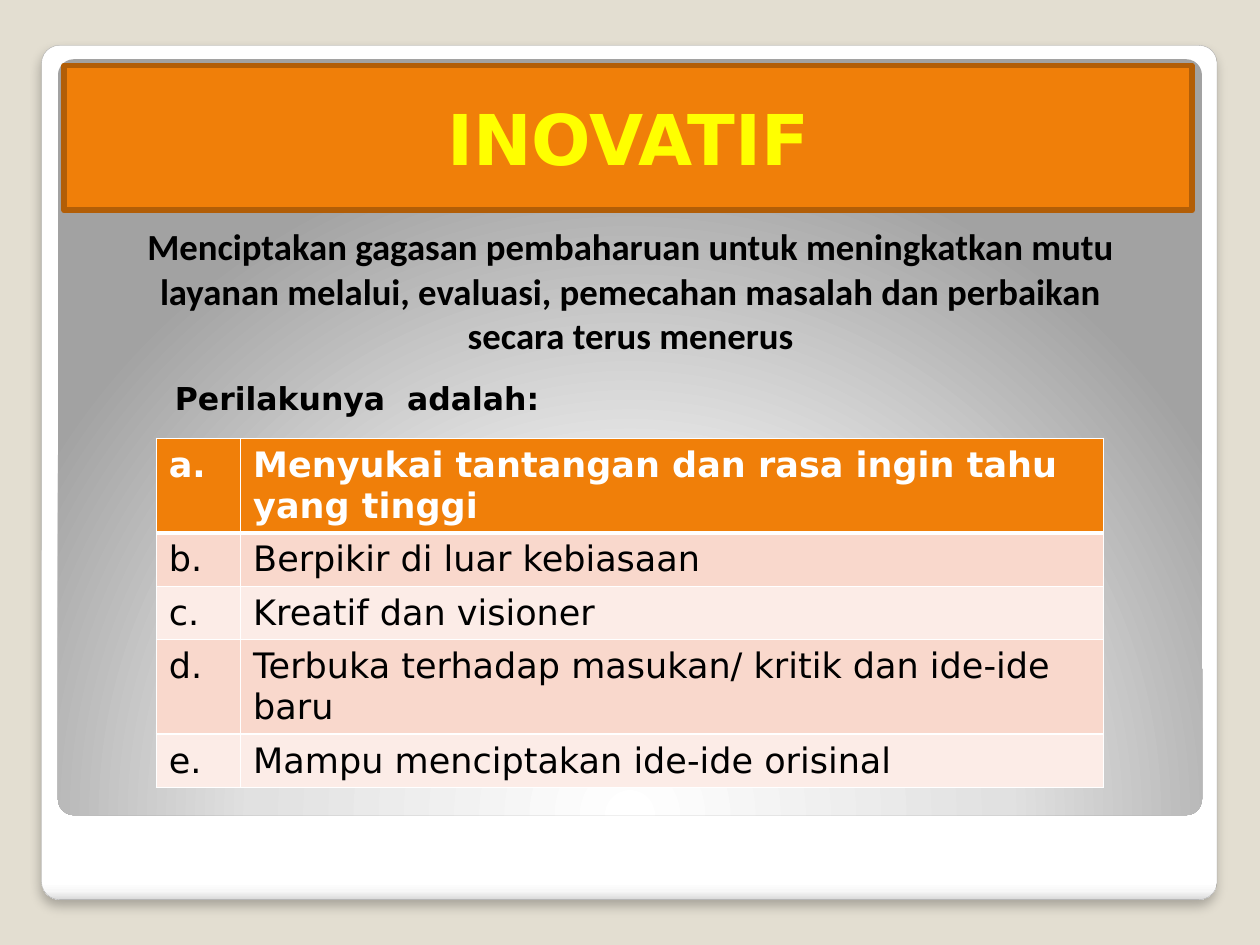
"""Build the INOVATIF slide: framed panel, banner, definition and behaviour table."""
from lxml import etree
from pptx import Presentation
from pptx import util as u
from pptx.dml.color import RGBColor
from pptx.enum import shapes, text
from pptx.oxml import parse_xml
from pptx.oxml.ns import qn

BANNER = "INOVATIF"
DEFINITION = ("Menciptakan gagasan pembaharuan untuk meningkatkan mutu layanan melalui, "
              "evaluasi, pemecahan masalah dan perbaikan secara terus menerus")
LEAD = "Perilakunya  adalah:"
BEHAVIOURS = [
    ("a.", "Menyukai tantangan dan rasa ingin tahu yang tinggi"),
    ("b.", "Berpikir di luar kebiasaan"),
    ("c.", "Kreatif dan visioner"),
    ("d.", "Terbuka terhadap masukan/ kritik dan ide-ide baru"),
    ("e.", "Mampu menciptakan ide-ide orisinal"),
]
COLUMNS = [0.67, 6.85]
ROWS = [0.75, 0.42, 0.42, 0.75, 0.42]
BANDS = ["FCECE7", "F9D8CC"]
ORANGE, BROWN, YELLOW, BLACK, WHITE = "F07F09", "B25E07", "FFFF00", "000000", "FFFFFF"
SANS = "DejaVu Sans"
A = 'xmlns:a="http://schemas.openxmlformats.org/drawingml/2006/main"'
LINEAR = '<a:lin ang="5400000" scaled="0"/>'
RADIAL = ('<a:path path="circle"><a:fillToRect l="50000" t="175000" '
          'r="50000" b="-75000"/></a:path>')
SHADOW = (f'<a:effectLst {A}><a:outerShdw blurRad="76200" dist="50800" dir="5400000" '
          'algn="t" rotWithShape="0"><a:srgbClr val="000000"><a:alpha val="25000"/>'
          '</a:srgbClr></a:outerShdw></a:effectLst>')


def rgb(value):
    """Turn a hex string into a colour."""
    return RGBColor.from_string(value)


def box(*lengths):
    """Turn inches into lengths."""
    return [u.Inches(n) for n in lengths]


def write(tf, words, size, font, colour, bold=True, align=None):
    """Fill a text frame with one formatted paragraph."""
    tf.word_wrap = True
    tf.text = words
    p = tf.paragraphs[0]
    p.alignment = align
    f = p.runs[0].font
    f.size, f.name, f.bold = u.Pt(size), font, bold
    f.color.rgb = rgb(colour)


def add_panel(slide, area, stops, direction):
    """Add a rounded panel with a gradient fill."""
    sp = slide.shapes.add_shape(shapes.MSO_SHAPE.ROUNDED_RECTANGLE, *box(*area))
    sp.adjustments[0] = 0.021
    sp.shadow.inherit = False
    sp.line.fill.background()
    marks = "".join(f'<a:gs pos="{pos * 1000}"><a:srgbClr val="{colour}"/></a:gs>'
                    for pos, colour in stops)
    geometry = sp._element.spPr.find(qn("a:prstGeom"))
    geometry.addnext(parse_xml(
        f'<a:gradFill {A} rotWithShape="1"><a:gsLst>{marks}</a:gsLst>{direction}</a:gradFill>'))
    return sp


def set_borders(cell, top, bottom):
    """Draw white borders around a cell, before its fill."""
    tcPr = cell._tc.get_or_add_tcPr()
    for i, (side, width) in enumerate(zip("LRTB", (1, 1, top, bottom))):
        ln = etree.Element(qn(f"a:ln{side}"), w=str(u.Pt(width)))
        fill = etree.SubElement(ln, qn("a:solidFill"))
        etree.SubElement(fill, qn("a:srgbClr"), val=WHITE)
        tcPr.insert(i, ln)


def add_behaviours(slide):
    """Add the lettered table with a header row and bands."""
    area = box(1.24, 3.48, sum(COLUMNS), sum(ROWS))
    table = slide.shapes.add_table(len(ROWS), len(COLUMNS), *area).table
    table.horz_banding = False
    for column, width in zip(table.columns, COLUMNS):
        column.width = u.Inches(width)
    for i, (row, height) in enumerate(zip(table.rows, ROWS)):
        row.height = u.Inches(height)
        head = i == 0
        for cell, words in zip(row.cells, BEHAVIOURS[i]):
            write(cell.text_frame, words, 20, SANS, WHITE if head else BLACK, head)
            cell.fill.solid()
            cell.fill.fore_color.rgb = rgb(ORANGE if head else BANDS[i % 2])
            set_borders(cell, 3 if i == 1 else 1, 3 if head else 1)


def main():
    """Build and save the slide."""
    prs = Presentation()
    prs.slide_width, prs.slide_height = box(10, 7.5)
    slide = prs.slides.add_slide(prs.slide_layouts[5])
    slide.background.fill.solid()
    slide.background.fill.fore_color.rgb = rgb("E3DED1")
    center = text.PP_ALIGN.CENTER

    frame = add_panel(slide, (0.33, 0.36, 9.33, 6.78),
                      [(0, WHITE), (98, WHITE), (99, "F7F7F7"), (100, "DADADA")], LINEAR)
    frame.line.color.rgb = rgb("A4A4A4")
    frame.line.width = u.Pt(0.16)
    spPr = frame._element.spPr
    spPr.replace(spPr.find(qn("a:effectLst")), parse_xml(SHADOW))
    add_panel(slide, (0.46, 0.47, 9.08, 6),
              [(0, WHITE), (55, "E1E1E1"), (100, "A2A2A2")], RADIAL)

    add_behaviours(slide)

    banner = slide.shapes.add_shape(shapes.MSO_SHAPE.RECTANGLE, *box(0.51, 0.52, 8.95, 1.15))
    banner.shadow.inherit = False
    banner.fill.solid()
    banner.fill.fore_color.rgb = rgb(ORANGE)
    banner.line.color.rgb = rgb(BROWN)
    banner.line.width = u.Pt(3.35)
    banner.text_frame.vertical_anchor = text.MSO_ANCHOR.MIDDLE
    write(banner.text_frame, BANNER, 40, SANS, YELLOW, align=center)

    title = slide.shapes.title
    title.left, title.top, title.width, title.height = box(0.83, 1.73, 8.35, 1.15)
    tf = title.text_frame
    tf.auto_size = text.MSO_AUTO_SIZE.NONE
    tf.vertical_anchor = text.MSO_ANCHOR.BOTTOM
    write(tf, DEFINITION, 21, "Calibri", BLACK, align=center)
    slide.shapes._spTree.append(title._element)

    lead = slide.shapes.add_textbox(*box(1.29, 2.96, 3.16, 0.4))
    write(lead.text_frame, LEAD, 18, SANS, BLACK)
    lead.text_frame.auto_size = text.MSO_AUTO_SIZE.SHAPE_TO_FIT_TEXT
    prs.save("out.pptx")


if __name__ == "__main__":
    main()
